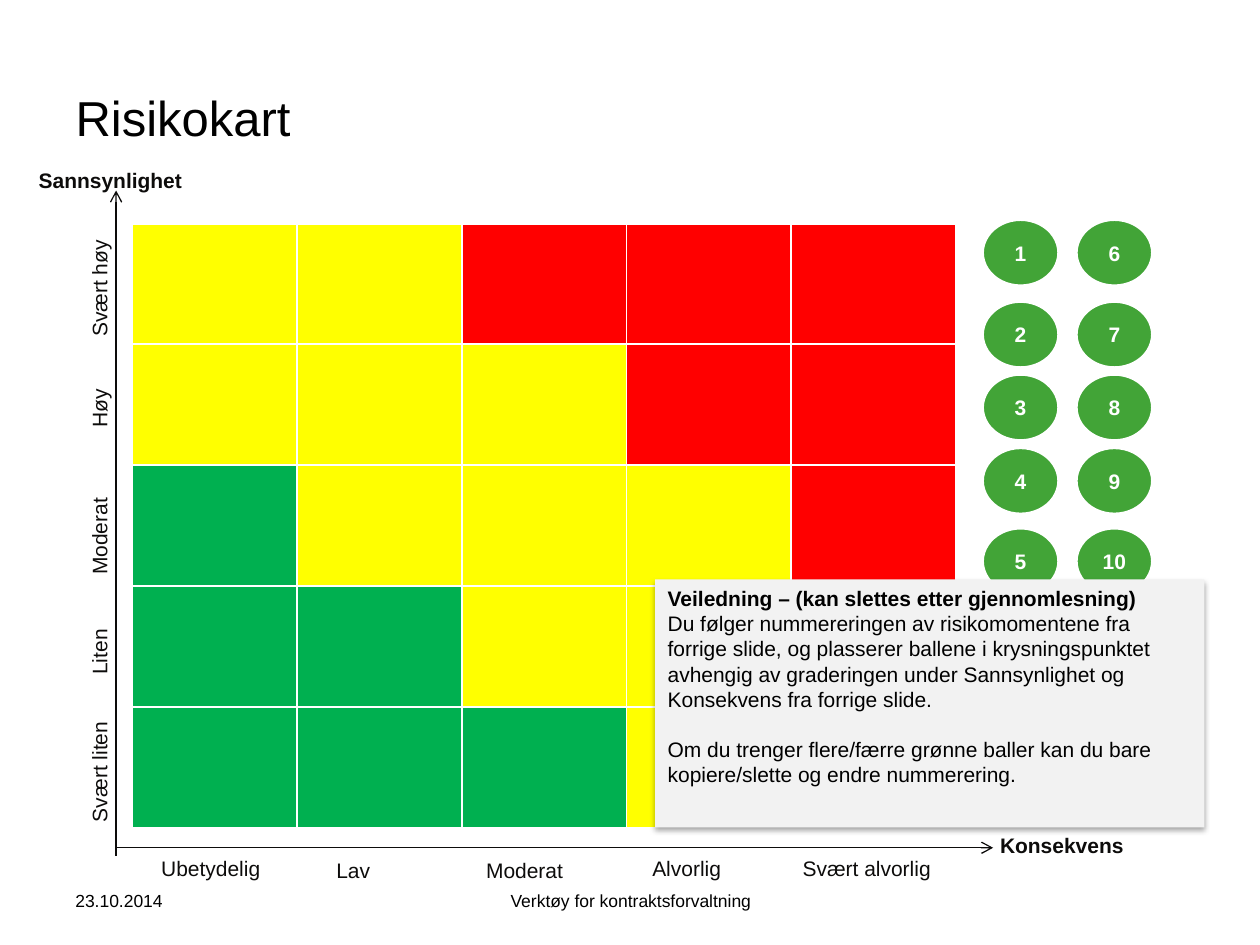
"""Builds a risk map slide with a coloured matrix, numbered balls and a guidance note."""
from dataclasses import dataclass

from lxml import etree
from pptx import Presentation
from pptx import util as u
from pptx.dml.color import RGBColor
from pptx.enum import shapes, text
from pptx.oxml.ns import qn


@dataclass(frozen=True)
class Theme:
    font: str = "Arial"
    black: str = "000000"
    ink: str = "0D0C0B"
    white: str = "FFFFFF"
    ball: str = "42A437"
    note: str = "F2F2F2"
    low: str = "00B050"
    medium: str = "FFFF00"
    high: str = "FF0000"
    title_size: int = 28
    body_size: int = 12
    footer_size: int = 10


def rgb(value):
    return RGBColor.from_string(value)


def write(paragraph, words, *, font, size, color, bold=False,
          align=text.PP_ALIGN.LEFT, before=0):
    paragraph.alignment = align
    paragraph.space_before = u.Pt(before)
    span = paragraph.add_run()
    span.text = words
    span.font.name = font
    span.font.size = u.Pt(size)
    span.font.bold = bold
    span.font.color.rgb = rgb(color)


class RiskPage:
    def __init__(self, deck, theme):
        self.theme = theme
        self.page = deck.slides.add_slide(deck.slide_layouts[5])

    def title(self, words, left, top, width, height):
        box = self.page.shapes.title
        box.left, box.top, box.width, box.height = map(u.Cm, (left, top, width, height))
        box.text_frame.vertical_anchor = text.MSO_ANCHOR.MIDDLE
        write(box.text_frame.paragraphs[0], words, font=self.theme.font,
              size=self.theme.title_size, color=self.theme.black)

    def label(self, words, left, top, width, height=0.77, *, rotation=0, size=None,
              color=None, anchor=text.MSO_ANCHOR.TOP, **style):
        box = self.page.shapes.add_textbox(*map(u.Cm, (left, top, width, height)))
        box.rotation = rotation
        frame = box.text_frame
        frame.word_wrap = True
        frame.vertical_anchor = anchor
        write(frame.paragraphs[0], words, font=self.theme.font,
              size=size or self.theme.body_size, color=color or self.theme.ink, **style)

    def footer(self, words, left, width, **style):
        self.label(words, left, 17.65, width, 1.02, size=self.theme.footer_size,
                   color=self.theme.black, anchor=text.MSO_ANCHOR.MIDDLE, **style)

    def matrix(self, levels, left, top, column_width, row_heights):
        fills = {"L": self.theme.low, "M": self.theme.medium, "H": self.theme.high}
        columns = len(levels[0])
        table = self.page.shapes.add_table(
            len(levels), columns, u.Cm(left), u.Cm(top),
            u.Cm(column_width * columns), u.Cm(sum(row_heights))).table
        for column in table.columns:
            column.width = u.Cm(column_width)
        for row, height, codes in zip(table.rows, row_heights, levels):
            row.height = u.Cm(height)
            for cell, code in zip(row.cells, codes):
                cell.fill.solid()
                cell.fill.fore_color.rgb = rgb(fills[code])

    def shape(self, kind, fill, left, top, width, height):
        shape = self.page.shapes.add_shape(kind, *map(u.Cm, (left, top, width, height)))
        shape.shadow.inherit = False
        shape.fill.solid()
        shape.fill.fore_color.rgb = rgb(fill)
        return shape

    def ball(self, number, left, top):
        ball = self.shape(shapes.MSO_SHAPE.OVAL, self.theme.ball, left, top, 1.55, 1.35)
        ball.line.color.rgb = rgb(self.theme.white)
        ball.line.width = u.Pt(2)
        frame = ball.text_frame
        frame.vertical_anchor = text.MSO_ANCHOR.MIDDLE
        write(frame.paragraphs[0], str(number), font=self.theme.font,
              size=self.theme.body_size, color=self.theme.white, bold=True,
              align=text.PP_ALIGN.CENTER)

    def axis(self, *ends):
        line = self.page.shapes.add_connector(
            shapes.MSO_CONNECTOR.STRAIGHT, *map(u.Cm, ends))
        line.line.color.rgb = rgb(self.theme.ink)
        line.line.width = u.Pt(0.75)
        properties = line._element.spPr
        etree.SubElement(properties.find(qn("a:ln")), qn("a:tailEnd"), type="arrow")
        etree.SubElement(properties, qn("a:effectLst"))

    def note(self, paragraphs, left, top, width, height):
        box = self.shape(shapes.MSO_SHAPE.RECTANGLE, self.theme.note,
                         left, top, width, height)
        box.line.fill.background()
        shadow = etree.SubElement(
            box._element.spPr.find(qn("a:effectLst")), qn("a:outerShdw"),
            blurRad=str(u.Pt(3.1)), dist=str(u.Pt(1.8)), dir="5400000", rotWithShape="0")
        color = etree.SubElement(shadow, qn("a:srgbClr"), val=self.theme.black)
        etree.SubElement(color, qn("a:alpha"), val="35000")
        frame = box.text_frame
        frame.word_wrap = True
        frame.vertical_anchor = text.MSO_ANCHOR.TOP
        for index, (words, style) in enumerate(paragraphs):
            paragraph = frame.add_paragraph() if index else frame.paragraphs[0]
            write(paragraph, words, font=self.theme.font, size=self.theme.body_size,
                  color=self.theme.black, **style)


def main():
    deck = Presentation()
    deck.slide_width, deck.slide_height = u.Cm(25.4), u.Cm(19.05)
    risk = RiskPage(deck, Theme())

    risk.title("Risikokart", 1.27, 0.76, 22.86, 3.18)
    risk.matrix(["MMHHH", "MMMHH", "LMMMH", "LLMMM", "LLLMM"],
                2.67, 4.52, 3.32, [2.41] + [2.44] * 4)

    risk.label("Konsekvens", 19.91, 16.66, 3.4, bold=True)
    risk.label("Sannsynlighet", 0.53, 3.25, 3.99, bold=True)
    risk.axis(2.34, 17.09, 20.02, 17.09)
    risk.axis(2.34, 17.25, 2.34, 3.84)

    for words, top in [("Svært høy", 5.13), ("Høy", 6.96), ("Moderat", 9.93),
                       ("Liten", 11.94), ("Svært liten", 14.91)]:
        risk.label(words, 0.48, top, 3.05, rotation=270)
    for words, left, top in [("Ubetydelig", 3.0, 17.12), ("Lav", 6.53, 17.17),
                             ("Moderat", 9.55, 17.17), ("Alvorlig", 12.9, 17.12),
                             ("Svært alvorlig", 15.93, 17.12)]:
        risk.label(words, left, top, 3.4)

    ball_tops = [4.42, 6.07, 7.54, 9.02, 10.64]
    for column, left in enumerate([19.8, 21.69]):
        for row, top in enumerate(ball_tops):
            risk.ball(column * len(ball_tops) + row + 1, left, top)

    risk.note([
        ("Veiledning – (kan slettes etter gjennomlesning)", {"bold": True}),
        ("Du følger nummereringen av risikomomentene fra forrige slide, og plasserer "
         "ballene i krysningspunktet avhengig av graderingen under Sannsynlighet og "
         "Konsekvens fra forrige slide.", {}),
        ("Om du trenger flere/færre grønne baller kan du bare kopiere/slette og endre "
         "nummerering.", {"before": 14}),
    ], 13.21, 11.68, 11.07, 5.0)

    risk.footer("23.10.2014", 1.27, 5.92)
    risk.footer("Verktøy for kontraktsforvaltning", 8.69, 8.05,
                align=text.PP_ALIGN.CENTER)
    deck.save("out.pptx")


if __name__ == "__main__":
    main()
